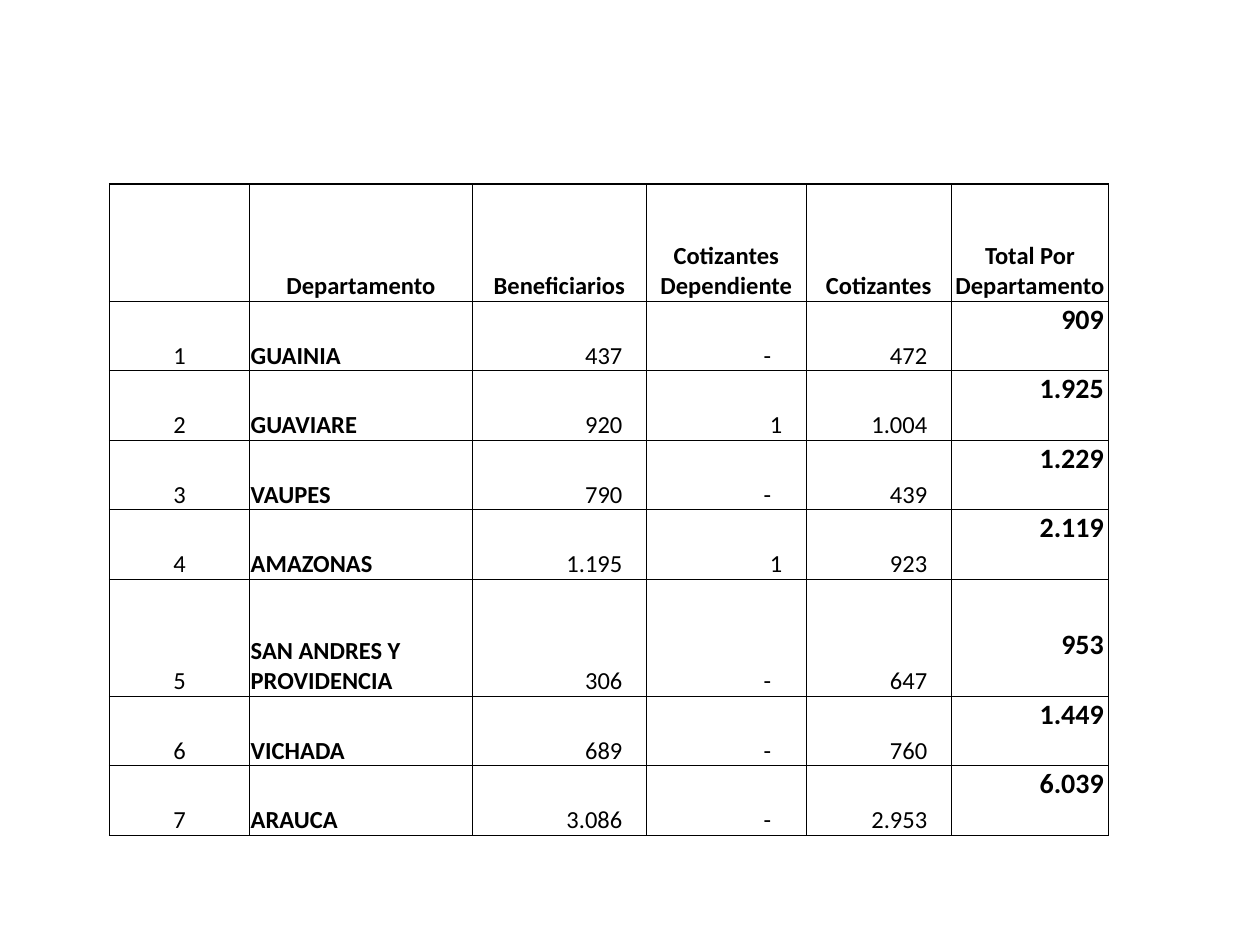
from dataclasses import dataclass
from typing import Any

from lxml.etree import SubElement
from pptx import Presentation
from pptx.dml.color import RGBColor
from pptx.enum.text import MSO_ANCHOR as Anchor, PP_ALIGN as Align
from pptx.oxml.ns import qn
from pptx.util import Inches, Pt

HEADERS = ["", "Departamento", "Beneficiarios", "Cotizantes Dependiente",
           "Cotizantes", "Total Por Departamento"]
DEPARTMENTS = [
    ("GUAINIA", "437", "-", "472", "909"),
    ("GUAVIARE", "920", "1", "1.004", "1.925"),
    ("VAUPES", "790", "-", "439", "1.229"),
    ("AMAZONAS", "1.195", "1", "923", "2.119"),
    ("SAN ANDRES Y PROVIDENCIA", "306", "-", "647", "953"),
    ("VICHADA", "689", "-", "760", "1.449"),
    ("ARAUCA", "3.086", "-", "2.953", "6.039"),
]
COLUMN_WIDTHS = [1.11, 1.77, 1.38, 1.27, 1.15, 1.25]
TALL_ROW, SHORT_ROW = 0.93, 0.54
TALL_ROWS = {0, 5}
TOTAL_COLUMN = len(HEADERS) - 1
COLUMN_ALIGNS = [Align.CENTER, Align.LEFT] + [Align.RIGHT] * 4
RIGHT_INSETS = [0.01, 0.01, 0.19, 0.19, 0.19, 0.04]
DASH_INSET = 0.28
TOTAL_BOTTOM_INSET = 0.27


def color(value):
    """Return the colour for a hex string."""
    return RGBColor.from_string(value)


@dataclass
class SlideBuilder:
    """Hold the style and the current slide."""

    deck: Any
    page: Any
    font: str = "Calibri"
    ink: str = "000000"
    size: int = 14
    total_size: int = 16
    inner_line: float = 0.5
    outer_line: float = 1

    def table(self, left, top, rows):
        """Add the table at a place given in shares of the slide."""
        heights = [TALL_ROW if index in TALL_ROWS else SHORT_ROW
                   for index in range(len(rows))]
        frame = self.page.shapes.add_table(
            len(rows), len(COLUMN_WIDTHS),
            int(self.deck.slide_width * left), int(self.deck.slide_height * top),
            Inches(sum(COLUMN_WIDTHS)), Inches(sum(heights)))
        grid = frame.table
        grid.first_row = grid.horz_banding = False
        for column, width in zip(grid.columns, COLUMN_WIDTHS):
            column.width = Inches(width)
        for row, height in zip(grid.rows, heights):
            row.height = Inches(height)
        for row, values in enumerate(rows):
            for column, value in enumerate(values):
                cell = grid.cell(row, column)
                self.borders(cell, {"L": column == 0, "R": column == TOTAL_COLUMN,
                                    "T": row == 0, "B": row == len(rows) - 1})
                cell.fill.background()
                self.cell_text(cell, value, row, column)

    def borders(self, cell, edges):
        """Draw the four sides of a cell, heavier on the table's outline."""
        properties = cell._tc.get_or_add_tcPr()
        for side, is_outer in edges.items():
            width = Pt(self.outer_line if is_outer else self.inner_line)
            line = SubElement(properties, qn(f"a:ln{side}"), w=str(int(width)))
            fill = SubElement(line, qn("a:solidFill"))
            SubElement(fill, qn("a:srgbClr"), val=self.ink)

    def cell_text(self, cell, value, row, column):
        """Fill a cell with text placed by its row and column."""
        is_header = row == 0
        is_total = column == TOTAL_COLUMN and not is_header
        right = 0.01 if is_header else RIGHT_INSETS[column]
        cell.vertical_anchor = Anchor.BOTTOM
        cell.margin_left = cell.margin_top = Inches(0.01)
        cell.margin_right = Inches(DASH_INSET if value == "-" else right)
        cell.margin_bottom = Inches(TOTAL_BOTTOM_INSET if is_total else 0)
        cell.text = value
        para = cell.text_frame.paragraphs[0]
        para.alignment = Align.CENTER if is_header else COLUMN_ALIGNS[column]
        para.font.name = self.font
        para.font.size = Pt(self.total_size if is_total else self.size)
        para.font.bold = is_header or column in (1, TOTAL_COLUMN)
        para.font.color.rgb = color(self.ink)


def main():
    """Build and save the slide."""
    deck = Presentation()
    deck.slide_width, deck.slide_height = Inches(10), Inches(7.5)
    page = deck.slides.add_slide(deck.slide_layouts[6])
    rows = [HEADERS] + [(str(number), *values)
                        for number, values in enumerate(DEPARTMENTS, 1)]
    SlideBuilder(deck, page).table(0.087, 1.46 / 7.5, rows)
    deck.save("out.pptx")


if __name__ == "__main__":
    main()
